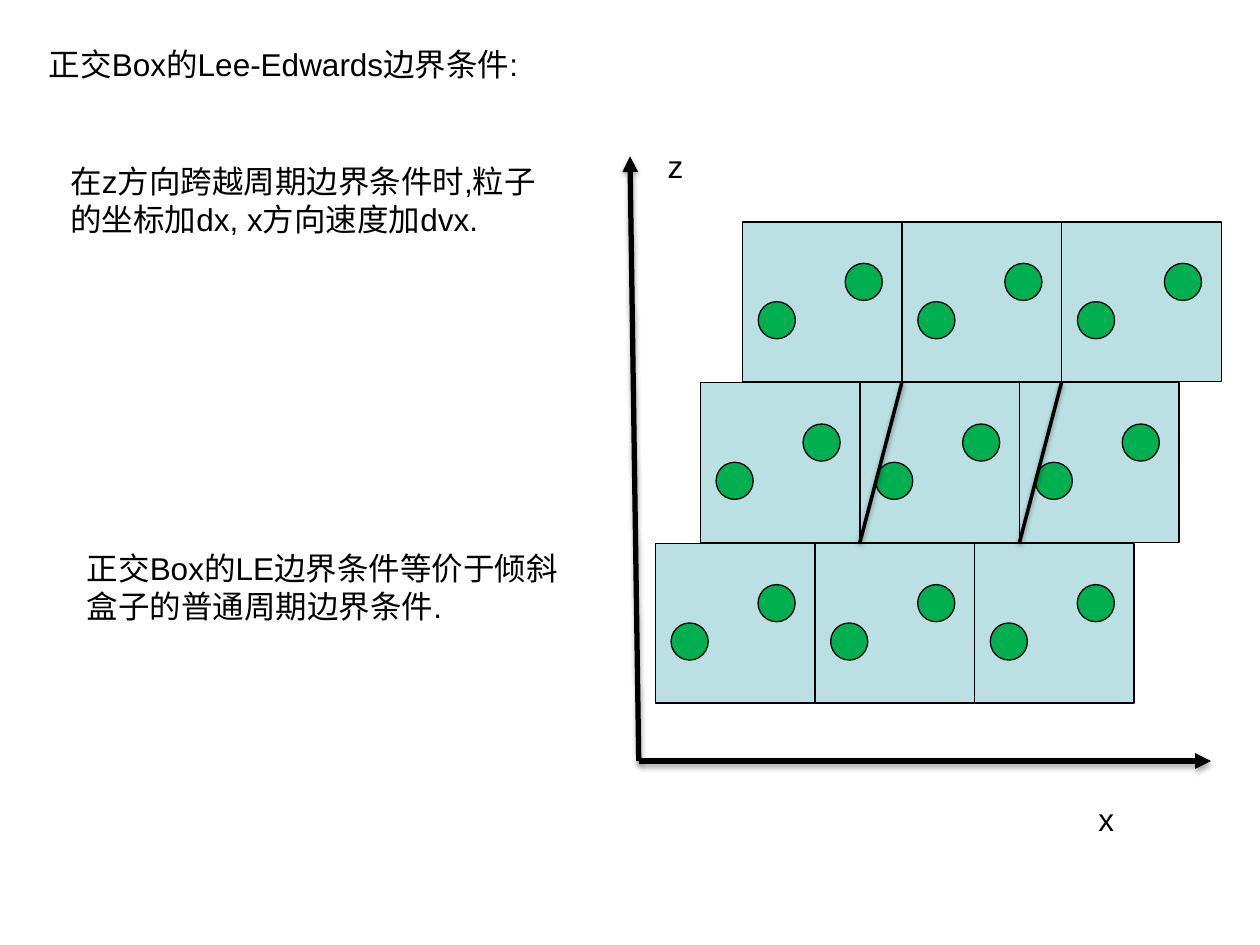
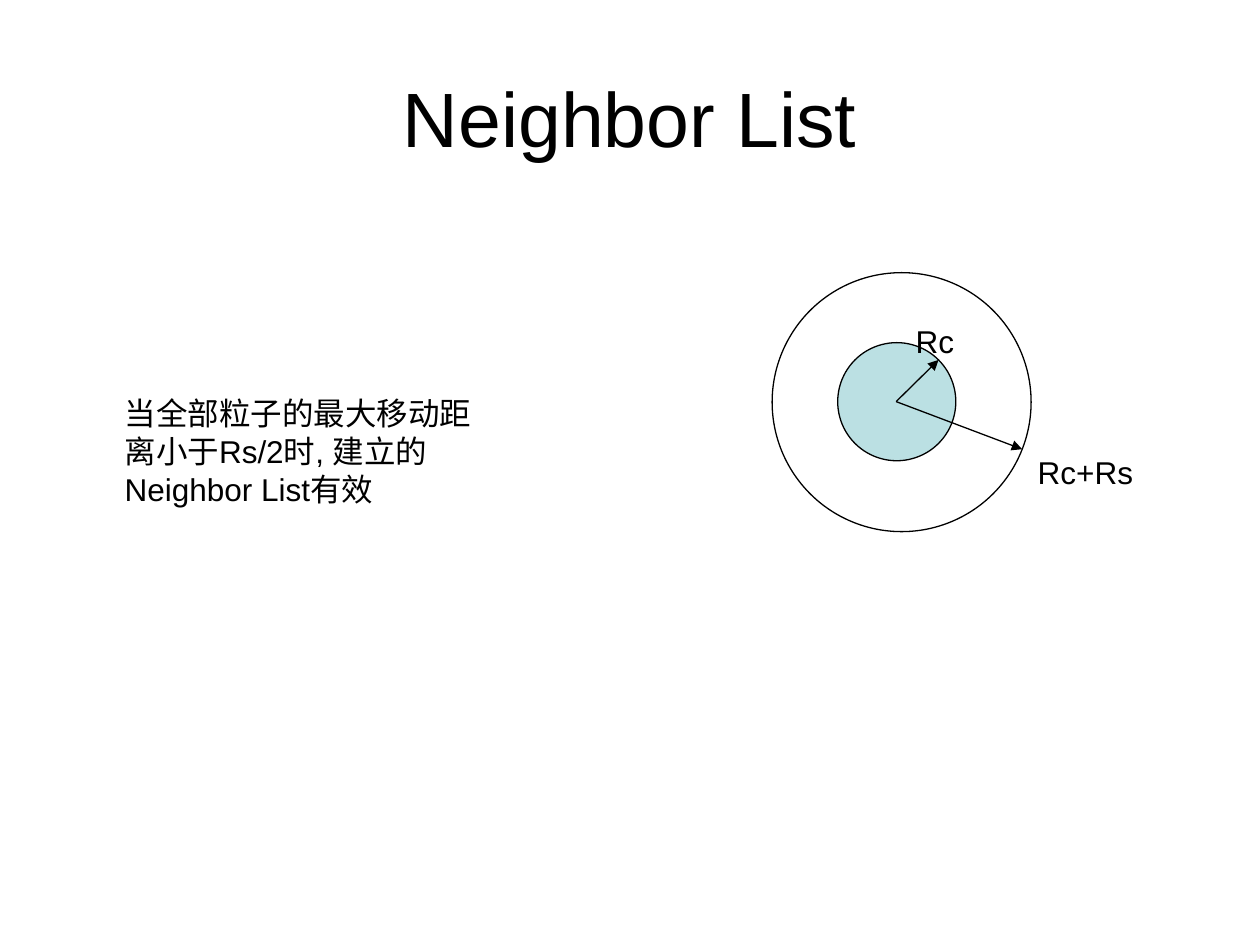
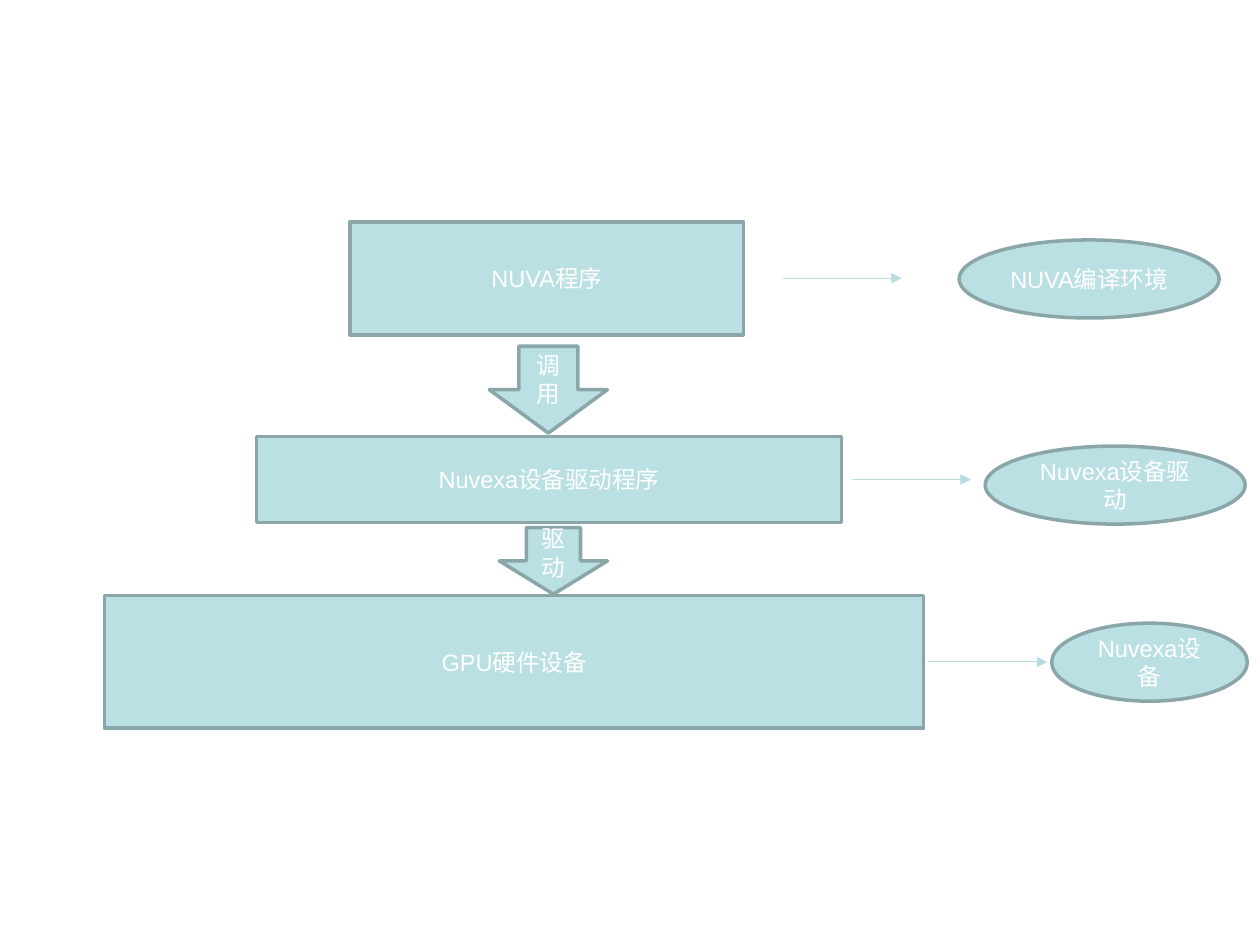
from dataclasses import dataclass
from lxml.etree import SubElement
from pptx import Presentation
from pptx.dml.color import RGBColor as RGB
from pptx.enum.shapes import MSO_CONNECTOR as CONN, MSO_SHAPE as SHAPE
from pptx.enum.text import MSO_ANCHOR as ANCHOR, MSO_AUTO_SIZE as FIT, PP_ALIGN as ALIGN
from pptx.oxml.ns import qn
from pptx.util import Pt


@dataclass(frozen=True)
class Theme:
    """Colours, type sizes and line widths shared by the slides."""
    font: str = "Arial"
    ink: str = "000000"
    white: str = "FFFFFF"
    pale: str = "BBE0E3"
    particle: str = "00B050"
    border: str = "8AA6A8"
    link: str = "B6DCDF"
    title: float = 44
    body: float = 18
    label: float = 13.5
    thin: float = 0.75
    medium: float = 2
    thick: float = 3


@dataclass(frozen=True)
class Box:
    """A rectangle in points."""
    x: float
    y: float
    w: float
    h: float

    def sub(self, dx, dy, w, h):
        """Return a box placed relative to this one."""
        return Box(self.x + dx, self.y + dy, w, h)

    def pts(self):
        """Return the four lengths for python-pptx."""
        return Pt(self.x), Pt(self.y), Pt(self.w), Pt(self.h)


T = Theme()


def add_run(p, text, size, color):
    """Add one styled run to a paragraph."""
    r = p.add_run()
    r.text = text
    r.font.name, r.font.size = T.font, Pt(size)
    r.font.color.rgb = RGB.from_string(color)


def add_text(s, box, text, size=T.body, align=ALIGN.LEFT, anchor=ANCHOR.TOP, fit=FIT.SHAPE_TO_FIT_TEXT):
    """Add a wrapped text box."""
    tf = s.shapes.add_textbox(*box.pts()).text_frame
    tf.word_wrap, tf.auto_size, tf.vertical_anchor = True, fit, anchor
    p = tf.paragraphs[0]
    p.alignment = align
    add_run(p, text, size, T.ink)


def add_shape(s, kind, box, fill=None, line=T.ink, width=T.thin):
    """Add a flat preset shape, unfilled when no fill is given."""
    sp = s.shapes.add_shape(kind, *box.pts())
    sp.shadow.inherit = False
    if fill:
        sp.fill.solid()
        sp.fill.fore_color.rgb = RGB.from_string(fill)
    else:
        sp.fill.background()
    sp.line.color.rgb = RGB.from_string(line)
    sp.line.width = Pt(width)
    return sp


def add_node(s, kind, box, text):
    """Add a pale labelled shape."""
    tf = add_shape(s, kind, box, T.pale, T.border, T.medium).text_frame
    tf.word_wrap, tf.vertical_anchor = True, ANCHOR.MIDDLE
    p = tf.paragraphs[0]
    p.alignment = ALIGN.CENTER
    add_run(p, text, T.label, T.white)


def add_line(s, start, end, color=T.ink, width=T.thin, arrow=True, shadow=0):
    """Add a line with an optional arrowhead and a shadow opacity in percent."""
    c = s.shapes.add_connector(CONN.STRAIGHT, *(Pt(v) for v in (*start, *end)))
    c.line.color.rgb = RGB.from_string(color)
    c.line.width = Pt(width)
    if arrow:
        SubElement(c.line._get_or_add_ln(), qn("a:tailEnd"), type="triangle")
    effects = SubElement(c._element.spPr, qn("a:effectLst"))
    if shadow:
        sh = SubElement(effects, qn("a:outerShdw"), blurRad=str(Pt(3.1)), dist=str(Pt(1.7)),
                        dir="5400000", rotWithShape="0")
        clr = SubElement(sh, qn("a:srgbClr"), val=T.ink)
        SubElement(clr, qn("a:alpha"), val=str(shadow * 1000))


def draw_cell(s, box):
    """Draw one periodic cell with its two particles."""
    add_shape(s, SHAPE.RECTANGLE, box, T.pale)
    for dx, dy in ((9, 45.5), (58.7, 23.6)):
        add_shape(s, SHAPE.OVAL, box.sub(dx, dy, 21.2, 21.2), T.particle)


def draw_lattice(s, box):
    """Draw three shifted rows of cells and the sheared cell edges."""
    side, pitch = 91.2, 91.8
    shifts = (49.8, 25.7, 0)
    for row, shift in enumerate(shifts):
        for col in range(3):
            draw_cell(s, box.sub(shift + col * side, row * pitch, side, side))
    for col in (1, 2):
        top, bottom = (box.sub(shifts[row] + col * side, y, 0, 0)
                       for row, y in ((0, side), (1, 2 * pitch - 0.6)))
        add_line(s, (bottom.x, bottom.y), (top.x, top.y), width=T.medium, arrow=False, shadow=38)


def draw_axes(s, box):
    """Draw the x and z axes from the lower left corner, with their names."""
    origin = box.x + 5, box.y + box.h
    for end in ((box.x + box.w, origin[1]), (box.x, box.y)):
        add_line(s, origin, end, width=T.thick, shadow=35)
    add_text(s, box.sub(260.6, 364.2, 59, 29), "x")
    add_text(s, box.sub(14.4, -8.6, 59, 29), "z")


def boundary_slide(s, box):
    """Build the slide on the Lee-Edwards boundary condition."""
    draw_lattice(s, box.sub(374.5, 126.9, 273.6, 274.8))
    draw_axes(s, box.sub(360, 89.3, 332, 345.6))
    for place, text in (
        ((20.9, 22.3, 353.5, 29), "正交Box的Lee-Edwards边界条件:"),
        ((33.1, 89.3, 284.4, 51), "在z方向跨越周期边界条件时,粒子的坐标加dx, x方向速度加dvx."),
        ((42.5, 310.3, 284.4, 51), "正交Box的LE边界条件等价于倾斜盒子的普通周期边界条件."),
    ):
        add_text(s, box.sub(*place), text)


def draw_cutoffs(s, box):
    """Draw the cutoff and neighbour circles with their radii."""
    add_shape(s, SHAPE.OVAL, box.sub(37.5, 40, 67.5, 67.5), T.pale)
    add_shape(s, SHAPE.OVAL, box)
    cx, cy = box.x + 70.9, box.y + 73.7
    for dx, dy in ((24.2, -23.8), (72, 27.2)):
        add_line(s, (cx, cy), (cx + dx, cy + dy))
    add_text(s, box.sub(75, 24.9, 70, 29), "Rc")
    add_text(s, box.sub(144.7, 99.7, 70, 29), "Rc+Rs")


def neighbor_slide(s, box):
    """Build the slide on the neighbour list."""
    add_text(s, box.sub(36, 21.6, 648, 90), "Neighbor List", T.title, ALIGN.CENTER, ANCHOR.MIDDLE, FIT.NONE)
    draw_cutoffs(s, box.sub(441.2, 155.8, 148, 148))
    add_text(s, box.sub(64.1, 221.8, 212.4, 72.7), "当全部粒子的最大移动距离小于Rs/2时, 建立的Neighbor List有效")


def draw_layer(s, box, text, gap, side_text, side):
    """Draw one layer, the arrow leaving it and the ellipse beside it."""
    add_node(s, SHAPE.RECTANGLE, box, text)
    x, y = box.x + box.w + gap, box.y + box.h / 2
    add_line(s, (x, y), (x + 68, y), T.link)
    dx, dy, w = side
    add_node(s, SHAPE.OVAL, Box(x + dx, y - 22.3 + dy, w, 44.6), side_text)


def stack_slide(s, box):
    """Build the slide on the software and hardware stack."""
    stack = box.sub(59.8, 126.7, 652, 290)
    for place, *layer in (
        ((140.2, 0, 224.9, 64.6), "NUVA程序", 22.4, "NUVA编译环境", (100.8, 0.4, 148.5)),
        ((86.9, 122.6, 334.1, 49.4), "Nuvexa设备驱动程序", 6, "Nuvexa设备驱动", (76.2, 3.2, 148.5)),
        ((0, 213.7, 468, 75.6), "GPU硬件设备", 2.6, "Nuvexa设备", (70.6, 0.2, 111.8)),
    ):
        draw_layer(s, stack.sub(*place), *layer)
    for place, text in (((219.8, 71.2, 67.5, 49.6), "调用"), ((225.5, 174.8, 61.9, 38), "驱动")):
        add_node(s, SHAPE.DOWN_ARROW, stack.sub(*place), text)


def main():
    """Build and save the three slides."""
    prs = Presentation()
    page = Box(0, 0, 720, 540)
    prs.slide_width, prs.slide_height = Pt(page.w), Pt(page.h)
    for build in (boundary_slide, neighbor_slide, stack_slide):
        build(prs.slides.add_slide(prs.slide_layouts[6]), page)
    prs.save("out.pptx")


if __name__ == "__main__":
    main()
